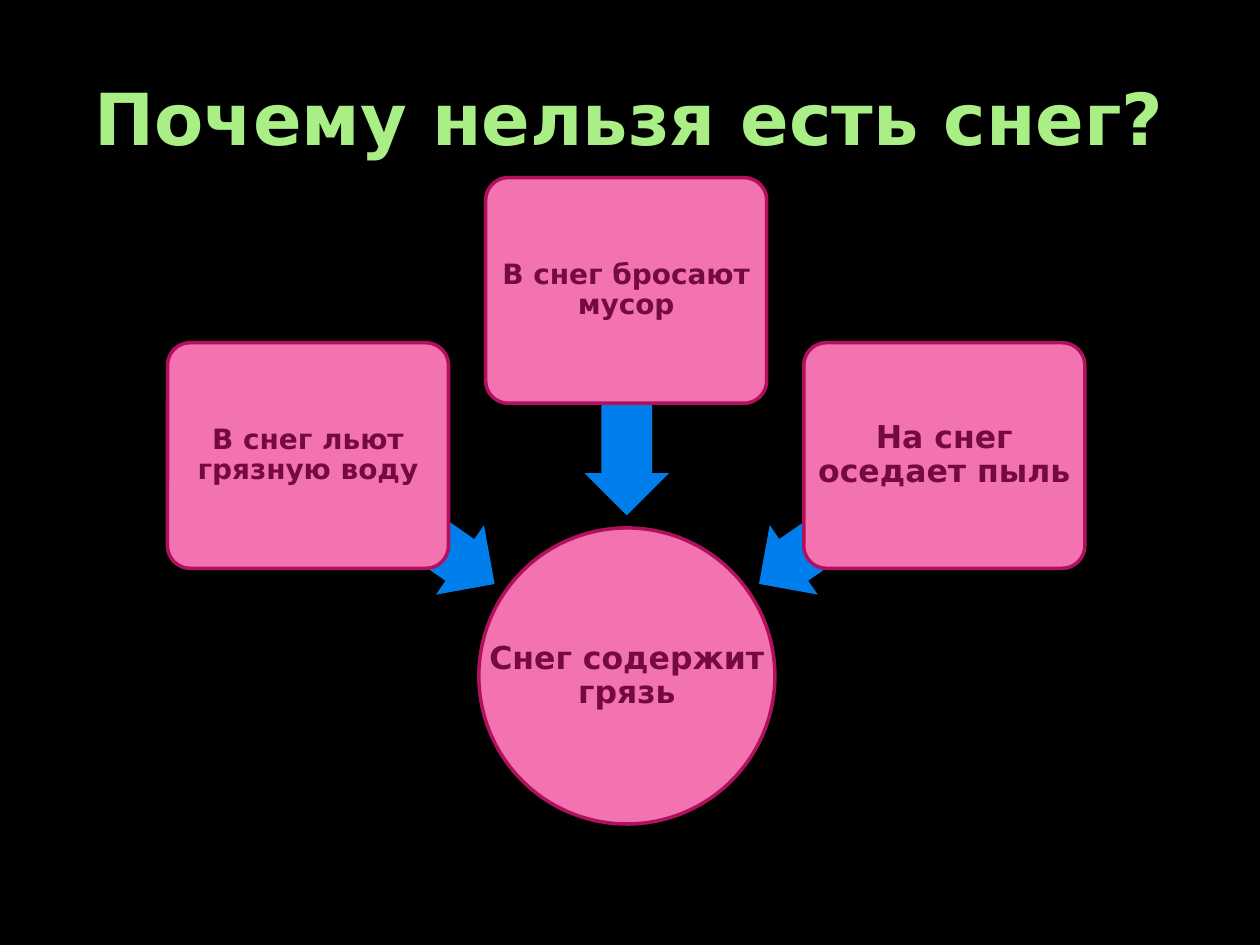
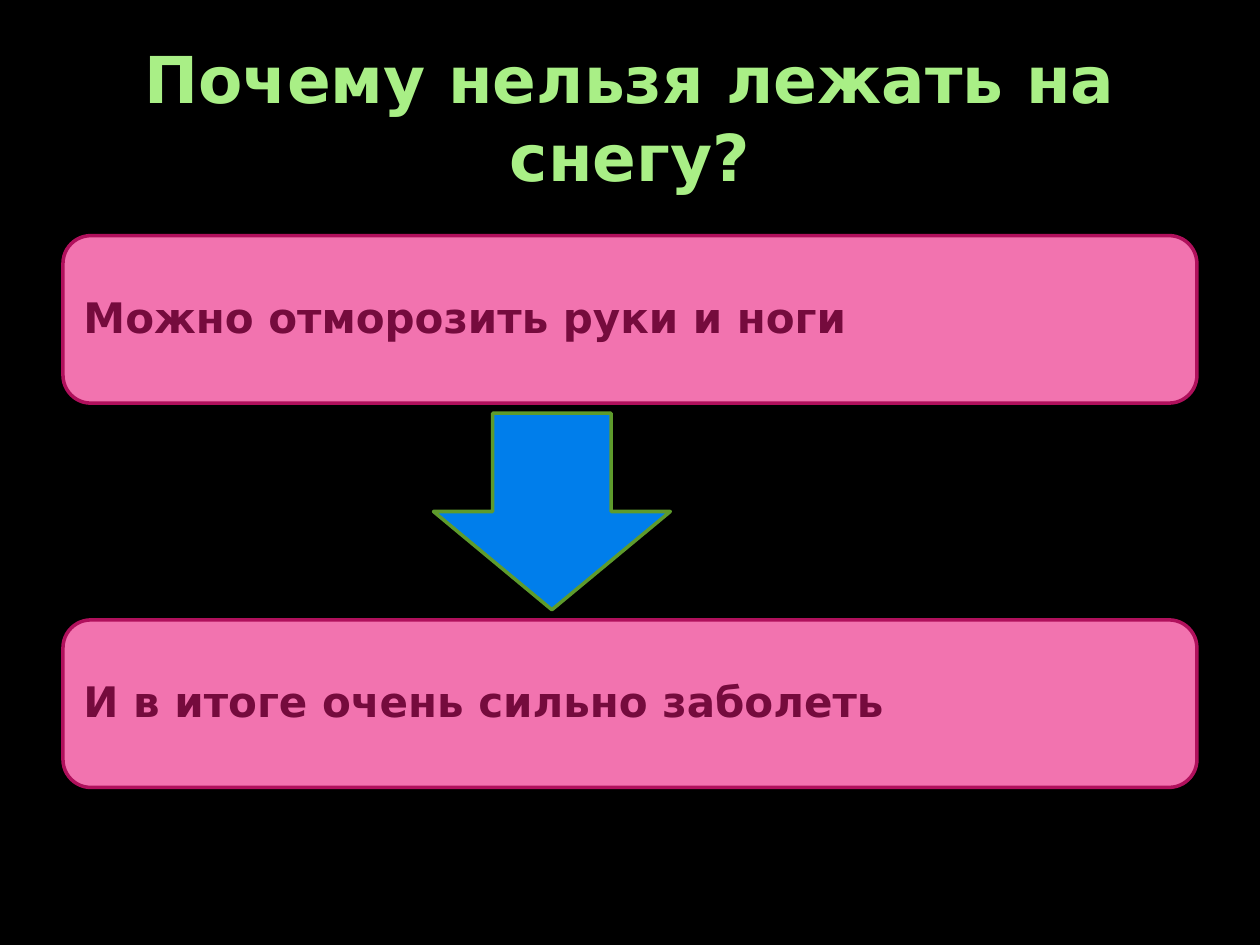
"""Build two slides on why snow should not be eaten or lain on."""
from pptx import Presentation
from pptx.dml.color import RGBColor
from pptx.enum.shapes import MSO_SHAPE
from pptx.enum.text import MSO_ANCHOR, MSO_AUTO_SIZE, PP_ALIGN
from pptx.util import Inches, Pt

ROUNDED = MSO_SHAPE.ROUNDED_RECTANGLE
OVAL = MSO_SHAPE.OVAL
LEFT_ARROW = MSO_SHAPE.LEFT_ARROW
DOWN_ARROW = MSO_SHAPE.DOWN_ARROW
MIDDLE = MSO_ANCHOR.MIDDLE
NO_FIT = MSO_AUTO_SIZE.NONE
CENTER, LEFT = PP_ALIGN.CENTER, PP_ALIGN.LEFT

FONT = "DejaVu Sans"
COLORS = {
    "background": "000000",
    "title": "A9EF86",
    "card": "F273AF",
    "card_line": "B0105C",
    "card_text": "750B3D",
    "arrow": "007EEB",
    "arrow_line": "5E9B2C",
}
RGB = {name: RGBColor.from_string(value) for name, value in COLORS.items()}


def write(sp, text, size, color="card_text", align=CENTER, inset=0.03, spacing=0.9):
    tf = sp.text_frame
    tf.word_wrap = True
    tf.auto_size = NO_FIT
    tf.vertical_anchor = MIDDLE
    tf.margin_left = tf.margin_right = Inches(inset)
    tf.margin_top = tf.margin_bottom = Inches(inset)
    p = tf.paragraphs[0]
    p.alignment = align
    p.line_spacing = spacing
    r = p.add_run()
    r.text = text
    r.font.name = FONT
    r.font.size = Pt(size)
    r.font.bold = True
    r.font.color.rgb = RGB[color]


def add_figure(s, kind, box, fill="card", line="card_line"):
    sp = s.shapes.add_shape(kind, *map(Inches, box))
    sp.shadow.inherit = False
    sp.fill.solid()
    sp.fill.fore_color.rgb = RGB[fill]
    if line:
        sp.line.color.rgb = RGB[line]
        sp.line.width = Pt(2)
    else:
        sp.line.fill.background()
    return sp


prs = Presentation()
prs.slide_width, prs.slide_height = Inches(10), Inches(7.5)

slides = []
for text, size in [
    ("Почему нельзя есть снег?", 41),
    ("Почему нельзя лежать на снегу?", 36.9),
]:
    s = prs.slides.add_slide(prs.slide_layouts[5])
    s.background.fill.solid()
    s.background.fill.fore_color.rgb = RGB["background"]
    title = s.shapes.title
    title.left, title.top = Inches(0.5), Inches(0.3)
    title.width, title.height = Inches(9), Inches(1.25)
    write(title, text, size, color="title", inset=0.05, spacing=1.0)
    slides.append(s)
eating, lying = slides

circle = (3.8, 4.19, 2.35, 2.35)
add_figure(eating, OVAL, circle)
label = eating.shapes.add_textbox(*map(Inches, circle))
write(label, "Снег содержит грязь", 18, inset=0.01)

for side, card_top, arrow_top, text, size in [
    (-1, 2.72, 3.79, "В снег льют грязную воду", 16),
    (0, 1.41, 2.86, "В снег бросают мусор", 16),
    (1, 2.72, 3.79, "На снег оседает пыль", 18),
]:
    arrow_box = (4.08 + 1.785 * side, arrow_top, 1.79, 0.67)
    arrow = add_figure(eating, LEFT_ARROW, arrow_box, "arrow", None)
    arrow.adjustments[0], arrow.adjustments[1] = 0.6, 0.5
    arrow.rotation = 270 + 55.3 * side
    card = add_figure(eating, ROUNDED, (3.855 + 2.525 * side, card_top, 2.23, 1.79))
    card.adjustments[0] = 0.1
    write(card, text, size, inset=0.02)

for top, text in [
    (1.87, "Можно отморозить руки и ноги"),
    (4.92, "И в итоге очень сильно заболеть"),
]:
    card = add_figure(lying, ROUNDED, (0.5, top, 9, 1.33))
    write(card, text, 24, align=LEFT, inset=0.1)
add_figure(lying, DOWN_ARROW, (3.44, 3.28, 1.88, 1.56), "arrow", "arrow_line")

prs.save("out.pptx")
